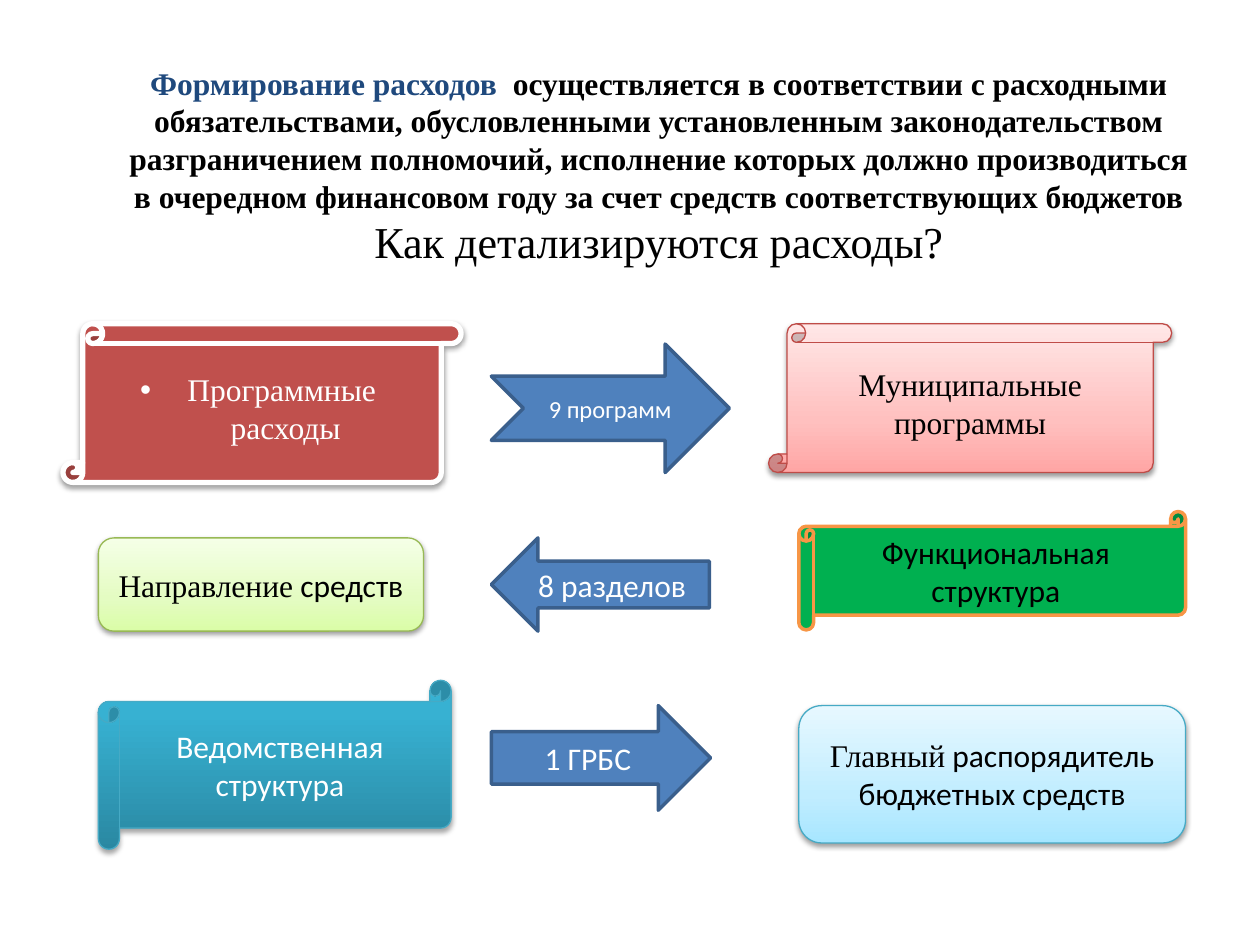
"""Build the slide on how budget expenditure is broken down."""
from lxml import etree
from pptx import Presentation
from pptx import util as u
from pptx.dml.color import RGBColor
from pptx.enum import shapes, text
from pptx.oxml.ns import qn

Pt = u.Pt
SERIF, SANS = "Times New Roman", "Calibri"
COLORS = {
    "navy": "1F497D", "black": "000000", "white": "FFFFFF", "red": "C0504D",
    "blue": "4F81BD", "blue_edge": "3A5F8C", "red_edge": "BF4C48",
    "green": "00B050", "orange": "F79646", "lime_edge": "98B955", "teal_edge": "46AAC5",
}
GRADIENTS = {
    "pink": [(0, "FFA6A5"), (35, "FFC0BF"), (100, "FFE7E7")],
    "lime": [(0, "DAFDA7"), (35, "E4FCC2"), (100, "F5FFE7")],
    "teal": [(0, "2A88A2"), (80, "37B1D2"), (100, "34B4D6")],
    "sky": [(0, "A7E6FF"), (35, "C1EDFF"), (100, "E7F8FF")],
}


def add_color(parent, tag, value, **attributes):
    holder = etree.SubElement(parent, qn(tag), **attributes)
    return etree.SubElement(holder, qn("a:srgbClr"), val=value)


def add_runs(paragraph, pieces, color, size=18, bold=None):
    paragraph.alignment = text.PP_ALIGN.CENTER
    for wording, face in pieces:
        run = paragraph.add_run()
        run.text = wording
        run.font.name, run.font.size, run.font.bold = face, Pt(size), bold
        run.font.color.rgb = RGBColor.from_string(COLORS[color])


deck = Presentation()
deck.slide_width, deck.slide_height = Pt(720), Pt(540)
slide = deck.slides.add_slide(deck.slide_layouts[5])

title = slide.shapes.title
title.left, title.top, title.width, title.height = Pt(65.5), Pt(35.3), Pt(622), Pt(118.8)
title.text_frame.word_wrap = True
title.text_frame.auto_size = text.MSO_AUTO_SIZE.NONE
title.text_frame.vertical_anchor = text.MSO_ANCHOR.MIDDLE
heading = title.text_frame.paragraphs[0]
add_runs(heading, [("Формирование расходов  ", SERIF)], "navy", bold=True)
add_runs(heading, [(
    "осуществляется в соответствии с расходными обязательствами, обусловленными "
    "установленным законодательством разграничением полномочий, исполнение которых "
    "должно производиться в очередном финансовом году за счет средств "
    "соответствующих бюджетов", SERIF)], "black", bold=True)
heading.add_line_break()
add_runs(heading, [("Как детализируются расходы?", SERIF)], "black", 25.2, False)

KIND = shapes.MSO_SHAPE
ARROW_LEFT, RIGHT_LEFT, LEFT_LEFT = 280.8, 456.5, 56.2
blocks = [
    (KIND.VERTICAL_SCROLL, (36, 185, 227.5, 90.7), "red", "white", 3, 38,
     "white", 18, [[("Программные  расходы", SERIF)]]),
    (KIND.NOTCHED_RIGHT_ARROW, (ARROW_LEFT, 196.6, 136, 73.4), "blue", "blue_edge", 2, 0,
     "white", 14, [[("9 программ", SANS)]]),
    (KIND.VERTICAL_SCROLL, (439.2, 185, 230.4, 85), "pink", "red_edge", 0.75, 38,
     "black", 18, [[("Муниципальные", SERIF)], [("программы", SERIF)]]),
    (KIND.ROUNDED_RECTANGLE, (LEFT_LEFT, 307.4, 185.8, 53.3), "lime", "lime_edge", 0.75, 38,
     "black", 18, [[("Направление", SERIF), (" средств", SANS)]]),
    (KIND.HORIZONTAL_SCROLL, (RIGHT_LEFT, 292.3, 221, 67.7), "green", "orange", 2, 0,
     "black", 18, [[("Функциональная структура", SANS)]]),
    (KIND.LEFT_ARROW, (ARROW_LEFT, 307.4, 124.6, 53.3), "blue", "blue_edge", 2, 0,
     "white", 18, [[("8 разделов", SANS)]]),
    (KIND.HORIZONTAL_SCROLL, (LEFT_LEFT, 388.8, 201.6, 96.5), "teal", "teal_edge", 0.75, 35,
     "white", 18, [[("Ведомственная структура", SANS)]]),
    (KIND.RIGHT_ARROW, (ARROW_LEFT, 403.2, 125.3, 59.8), "blue", "blue_edge", 2, 0,
     "white", 18, [[("1 ГРБС", SANS)]]),
    (KIND.FLOWCHART_ALTERNATE_PROCESS, (RIGHT_LEFT, 403.2, 221, 78.5), "sky", "teal_edge",
     0.75, 38, "black", 18,
     [[("Главный", SERIF), (" распорядитель бюджетных средств", SANS)]]),
]

for kind, place, fill, edge, edge_width, shade, ink, size, lines in blocks:
    block = slide.shapes.add_shape(kind, *map(Pt, place))
    properties = block._element.spPr
    if fill in GRADIENTS:
        block.fill.gradient()
        block.fill.gradient_angle = 90
        stops = properties.find(qn("a:gradFill")).find(qn("a:gsLst"))
        for stop in list(stops):
            stops.remove(stop)
        for position, value in GRADIENTS[fill]:
            add_color(stops, "a:gs", value, pos=str(position * 1000))
    else:
        block.fill.solid()
        block.fill.fore_color.rgb = RGBColor.from_string(COLORS[fill])
    block.line.color.rgb = RGBColor.from_string(COLORS[edge])
    block.line.width = Pt(edge_width)
    block.shadow.inherit = False
    if shade:
        drop = Pt(1.6 if shade == 38 else 1.8)
        tint = add_color(properties.find(qn("a:effectLst")), "a:outerShdw", COLORS["black"],
                         blurRad=str(Pt(3.1)), dist=str(drop), dir="5400000",
                         rotWithShape="0")
        etree.SubElement(tint, qn("a:alpha"), val=str(shade * 1000))

    frame = block.text_frame
    frame.word_wrap = True
    frame.vertical_anchor = text.MSO_ANCHOR.MIDDLE
    for index, pieces in enumerate(lines):
        paragraph = frame.add_paragraph() if index else frame.paragraphs[0]
        if kind == KIND.VERTICAL_SCROLL:
            layout = paragraph._p.get_or_add_pPr()
            layout.set("marL", str(Pt(27)))
            layout.set("indent", str(-Pt(27)))
            if fill == "red":
                etree.SubElement(layout, qn("a:buFont"), typeface="Arial")
                etree.SubElement(layout, qn("a:buChar"), char="•")
        add_runs(paragraph, pieces, ink, size)

deck.save("out.pptx")
